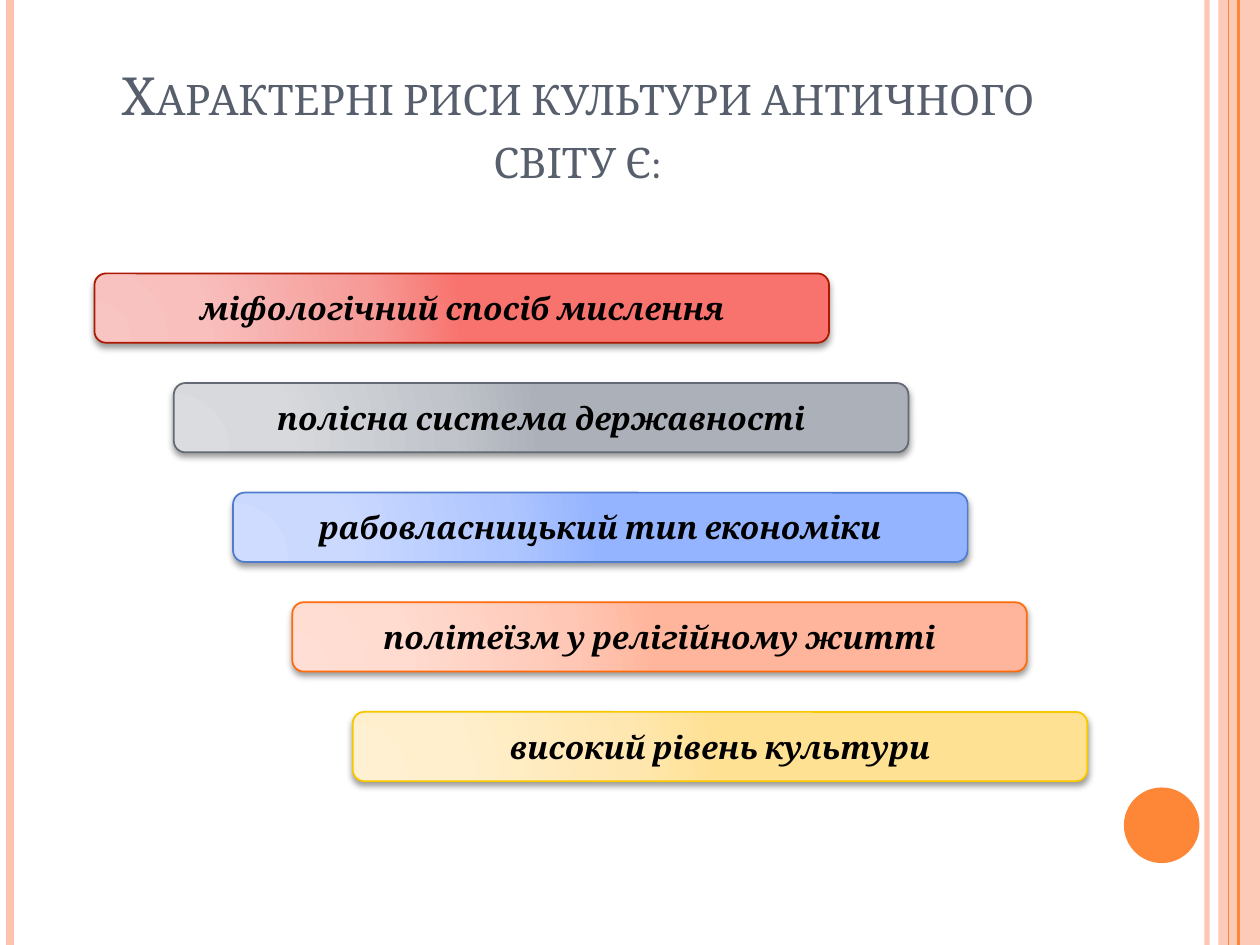
import pptx
import pptx.util
import pptx.dml.color
import pptx.enum.shapes
import pptx.enum.text
import pptx.oxml
import pptx.oxml.ns
from lxml import etree

Inches, Pt = pptx.util.Inches, pptx.util.Pt
KINDS = pptx.enum.shapes.MSO_SHAPE
ANCHOR = pptx.enum.text.MSO_ANCHOR
qn = pptx.oxml.ns.qn
NS = 'xmlns:a="http://schemas.openxmlformats.org/drawingml/2006/main"'

TITLE = "Характерні риси культури античного світу є:"
FONT = "Cambria"
ORANGE, PEACH = "FE8637", "FEC3AE"

# x, colour, width in points, opacity in percent
RULES = [
    (9.58, PEACH, 3, 93),
    (0.08, PEACH, 4.5, 100),
    (9.83, ORANGE, 1.5, 100),
    (9.75, ORANGE, 0.75, 100),
]
# text, left, line colour, gradient colours
TRAITS = [
    ("міфологічний спосіб мислення", 0.75, "AC1800",
     ("F8C5C3", "F8BFBD", "F69B98", "F8736E")),
    ("полісна система державності", 1.38, "636A74",
     ("DADCE0", "D7D9DD", "C1C5CB", "ABB0B9")),
    ("рабовласницький тип економіки", 1.85, "4F7CCF",
     ("CFDCFF", "CBD9FF", "AFC6FF", "95B4FF")),
    ("політеїзм у релігійному житті", 2.32, "FF6B0A",
     ("FFDED5", "FFDBD0", "FFC8B6", "FFB59B")),
    ("високий рівень культури", 2.8, "F8C700",
     ("FFF0D1", "FFEFCC", "FFE7B1", "FFE193")),
]
STOPS = (0, 30, 75, 100)
TOP, STEP = 2.17, 0.87
WIDE, HIGH = 5.83, 0.55


def paint(target, color):
    target.rgb = pptx.dml.color.RGBColor.from_string(color)


def fade(props, percent):
    """Make the first colour below props partly transparent."""
    color = next(props.iter(qn("a:srgbClr")))
    etree.SubElement(color, qn("a:alpha"), val=str(percent * 1000))


def add_rule(slide, x, color, width, opacity):
    rule = slide.shapes.add_connector(
        pptx.enum.shapes.MSO_CONNECTOR.STRAIGHT,
        Inches(x), 0, Inches(x), Inches(7.5))
    paint(rule.line.color, color)
    rule.line.width = Pt(width)
    props = rule._element.spPr
    if opacity < 100:
        fade(props, opacity)
    etree.SubElement(props, qn("a:effectLst"))


def add_block(slide, kind, box, color=None):
    block = slide.shapes.add_shape(kind, *map(Inches, box))
    block.shadow.inherit = False
    if color:
        block.fill.solid()
        paint(block.fill.fore_color, color)
        block.line.fill.background()
    return block


def write(shape, text, size, color, anchor):
    frame = shape.text_frame
    frame.word_wrap = True
    frame.auto_size = pptx.enum.text.MSO_AUTO_SIZE.NONE
    frame.vertical_anchor = anchor
    para = frame.paragraphs[0]
    para.alignment = pptx.enum.text.PP_ALIGN.CENTER
    run = para.add_run()
    run.text = text
    run.font.name, run.font.size = FONT, Pt(size)
    paint(run.font.color, color)
    return run


def add_glow(shape, colors):
    """Fill with a radial gradient from the lower left."""
    stops = "".join(
        f'<a:gs pos="{pos * 1000}"><a:srgbClr val="{color}"/></a:gs>'
        for pos, color in zip(STOPS, colors))
    shape._element.spPr.find(qn("a:prstGeom")).addnext(pptx.oxml.parse_xml(
        f'<a:gradFill {NS} rotWithShape="1"><a:gsLst>{stops}</a:gsLst>'
        '<a:path path="circle"><a:fillToRect l="5000" t="100000" '
        'r="120000" b="10000"/></a:path></a:gradFill>'))


def add_shadow(shape):
    effects = shape._element.spPr.find(qn("a:effectLst"))
    effects.append(pptx.oxml.parse_xml(
        f'<a:outerShdw {NS} blurRad="{Pt(4)}" dist="{Pt(2)}" dir="5400000" '
        'rotWithShape="0"><a:srgbClr val="000000"><a:alpha val="40000"/>'
        '</a:srgbClr></a:outerShdw>'))


def add_trait(slide, row, text, left, edge, colors):
    bar = add_block(slide, KINDS.ROUNDED_RECTANGLE,
                    (left, TOP + row * STEP, WIDE, HIGH))
    add_glow(bar, colors)
    paint(bar.line.color, edge)
    bar.line.width = Pt(1)
    add_shadow(bar)
    run = write(bar, text, 18, "000000", ANCHOR.MIDDLE)
    run.font.bold = run.font.italic = True


def main():
    deck = pptx.Presentation()
    deck.slide_width, deck.slide_height = Inches(10), Inches(7.5)
    slide = deck.slides.add_slide(deck.slide_layouts[5])

    band = add_block(slide, KINDS.RECTANGLE, (9.67, 0, 0.33, 7.5), PEACH)
    fade(band._element.spPr, 87)
    for rule in RULES:
        add_rule(slide, *rule)
    add_block(slide, KINDS.OVAL, (8.92, 6.25, 0.6, 0.6), ORANGE)

    title = slide.shapes.title
    title.left, title.top = Inches(0.5), Inches(0.3)
    title.width, title.height = Inches(8.17), Inches(1.25)
    run = write(title, TITLE, 30, "575F6D", ANCHOR.BOTTOM)
    run.font._element.set("cap", "small")

    for row, trait in enumerate(TRAITS):
        add_trait(slide, row, *trait)
    deck.save("out.pptx")


if __name__ == "__main__":
    main()
